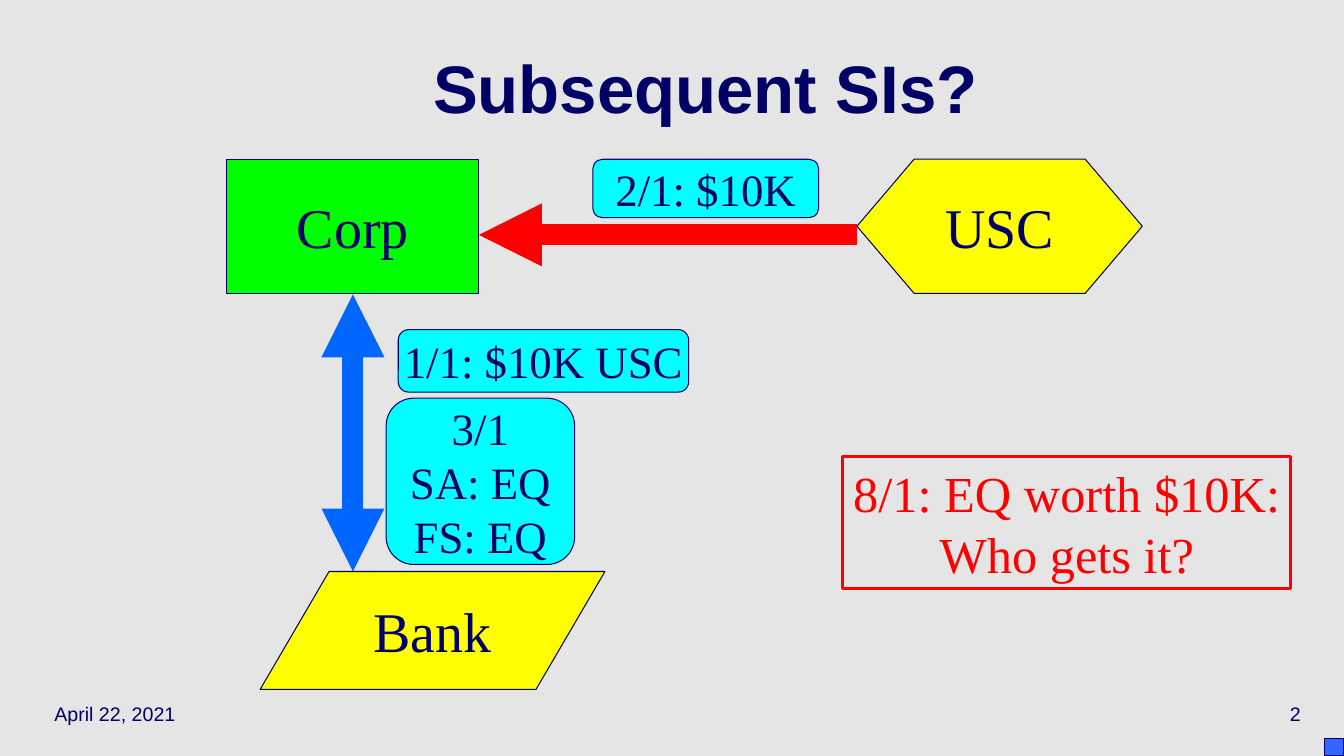
import dataclasses
import typing

import pptx
import pptx.dml.color
import pptx.enum.shapes
import pptx.enum.text
import pptx.oxml
import pptx.oxml.ns
import pptx.util

Inches = pptx.util.Inches
Kind = pptx.enum.shapes.MSO_SHAPE
Align = pptx.enum.text.PP_ALIGN
Box = tuple[float, float, float, float]
Point = tuple[float, float]


@dataclasses.dataclass(frozen=True)
class Theme:
    back: str = "E5E5E5"
    ink: str = "000066"
    red: str = "FF0000"
    blue: str = "0066FF"
    green: str = "00FF00"
    yellow: str = "FFFF00"
    cyan: str = "00FFFF"
    mark: str = "3366FF"
    sans: str = "Arial"
    serif: str = "Times New Roman"
    title: float = 48
    node: float = 40
    ask: float = 36
    label: float = 32
    foot: float = 14
    thin: float = 0.75
    edge: float = 2
    arrow: float = 15


theme = Theme()


@dataclasses.dataclass(frozen=True)
class Node:
    kind: Kind
    box: Box
    fill: str | None
    text: str = ""
    size: float = theme.node
    ink: str = theme.ink
    line: float = theme.thin
    wrap: bool = False
    pad: float = 0.1


@dataclasses.dataclass(frozen=True)
class Arrow:
    start: Point
    end: Point
    color: str
    heads: tuple[str, ...]


# Flow shapes, their labels, the question and the corner mark
nodes = [
    Node(Kind.FLOWCHART_DATA, (2.58, 5.67, 3.42, 1.17), theme.yellow, "Bank"),
    Node(Kind.FLOWCHART_PROCESS, (2.25, 1.58, 2.5, 1.33), theme.green, "Corp"),
    Node(Kind.FLOWCHART_PREPARATION, (8.5, 1.58, 2.83, 1.33), theme.yellow, "USC"),
    Node(Kind.FLOWCHART_ALTERNATE_PROCESS, (3.95, 3.27, 2.88, 0.62),
         theme.cyan, "1/1: $10K USC", theme.label),
    Node(Kind.FLOWCHART_ALTERNATE_PROCESS, (3.83, 3.95, 1.87, 1.65),
         theme.cyan, "3/1\nSA: EQ\nFS: EQ", theme.label),
    Node(Kind.FLOWCHART_ALTERNATE_PROCESS, (5.88, 1.58, 2.24, 0.58),
         theme.cyan, "2/1: $10K", theme.label),
    Node(Kind.RECTANGLE, (13.14, 7.33, 0.19, 0.17), theme.mark),
    Node(Kind.RECTANGLE, (8.36, 4.53, 4.44, 1.31), None,
         "8/1: EQ worth $10K: Who gets it?", theme.ask, theme.red,
         theme.edge, True, 0.05),
]

arrows = [
    Arrow((4.75, 2.33), (8.5, 2.33), theme.red, ("headEnd",)),
    Arrow((3.5, 2.92), (3.5, 5.67), theme.blue, ("headEnd", "tailEnd")),
]

notes = [
    ("April 22, 2021", (0.44, 6.83, 2.78, 0.5), Align.LEFT),
    ("2", (10.22, 6.83, 2.78, 0.5), Align.RIGHT),
]


def rgb(code: str) -> pptx.dml.color.RGBColor:
    return pptx.dml.color.RGBColor.from_string(code)


def apply(item: typing.Any, form: dict[str, typing.Any]) -> None:
    for name, value in form.items():
        setattr(item, name, value)


def write(shape: typing.Any, text: str, size: float, font: str, ink: str,
          align: Align = Align.CENTER, wrap: bool = True, bold: bool = False,
          pad: float = 0.1, space: float | None = None) -> None:
    frame = shape.text_frame
    frame.text = text
    apply(frame, {
        "auto_size": pptx.enum.text.MSO_AUTO_SIZE.NONE,
        "vertical_anchor": pptx.enum.text.MSO_ANCHOR.MIDDLE,
        "word_wrap": wrap,
        "margin_left": Inches(pad), "margin_right": Inches(pad),
        "margin_top": Inches(0.05), "margin_bottom": Inches(0.05),
    })
    for para in frame.paragraphs:
        apply(para, {"alignment": align, "line_spacing": space})
        for run in para.runs:
            apply(run.font, {"name": font, "size": pptx.util.Pt(size), "bold": bold})
            run.font.color.rgb = rgb(ink)


def place(shape: typing.Any, box: Box) -> None:
    names = ("left", "top", "width", "height")
    apply(shape, dict(zip(names, map(Inches, box))))


def draw_node(slide: typing.Any, node: Node) -> None:
    shape = slide.shapes.add_shape(node.kind, *map(Inches, node.box))
    shape.shadow.inherit = False
    if node.fill:
        shape.fill.solid()
        shape.fill.fore_color.rgb = rgb(node.fill)
    else:
        shape.fill.background()
    shape.line.color.rgb = rgb(node.ink)
    shape.line.width = pptx.util.Pt(node.line)
    if node.text:
        write(shape, node.text, node.size, theme.serif, node.ink,
              wrap=node.wrap, pad=node.pad)


def draw_arrow(slide: typing.Any, arrow: Arrow) -> None:
    ends = map(Inches, arrow.start + arrow.end)
    line = slide.shapes.add_connector(pptx.enum.shapes.MSO_CONNECTOR.STRAIGHT, *ends)
    line.line.color.rgb = rgb(arrow.color)
    line.line.width = pptx.util.Pt(theme.arrow)
    props = line._element.spPr
    stroke = props.find(pptx.oxml.ns.qn("a:ln"))
    space = pptx.oxml.ns.nsdecls("a")
    for head in arrow.heads:
        stroke.append(pptx.oxml.parse_xml(f'<a:{head} {space} type="triangle"/>'))
    props.append(pptx.oxml.parse_xml(f"<a:effectLst {space}/>"))


def main() -> None:
    deck = pptx.Presentation()
    apply(deck, {"slide_width": Inches(13.33), "slide_height": Inches(7.5)})
    slide = deck.slides.add_slide(deck.slide_layouts.get_by_name("Title Only"))
    slide.background.fill.solid()
    slide.background.fill.fore_color.rgb = rgb(theme.back)

    # Title
    title = slide.shapes.title
    place(title, (0.89, 0.33, 12.22, 1.25))
    write(title, "Subsequent SIs?", theme.title, theme.sans, theme.ink,
          bold=True, space=0.7)

    # Date and page number
    for text, box, align in notes:
        note = slide.shapes.add_textbox(*map(Inches, box))
        write(note, text, theme.foot, theme.sans, theme.ink, align)

    # Diagram
    for arrow in arrows:
        draw_arrow(slide, arrow)
    for node in nodes:
        draw_node(slide, node)

    deck.save("out.pptx")


if __name__ == "__main__":
    main()
